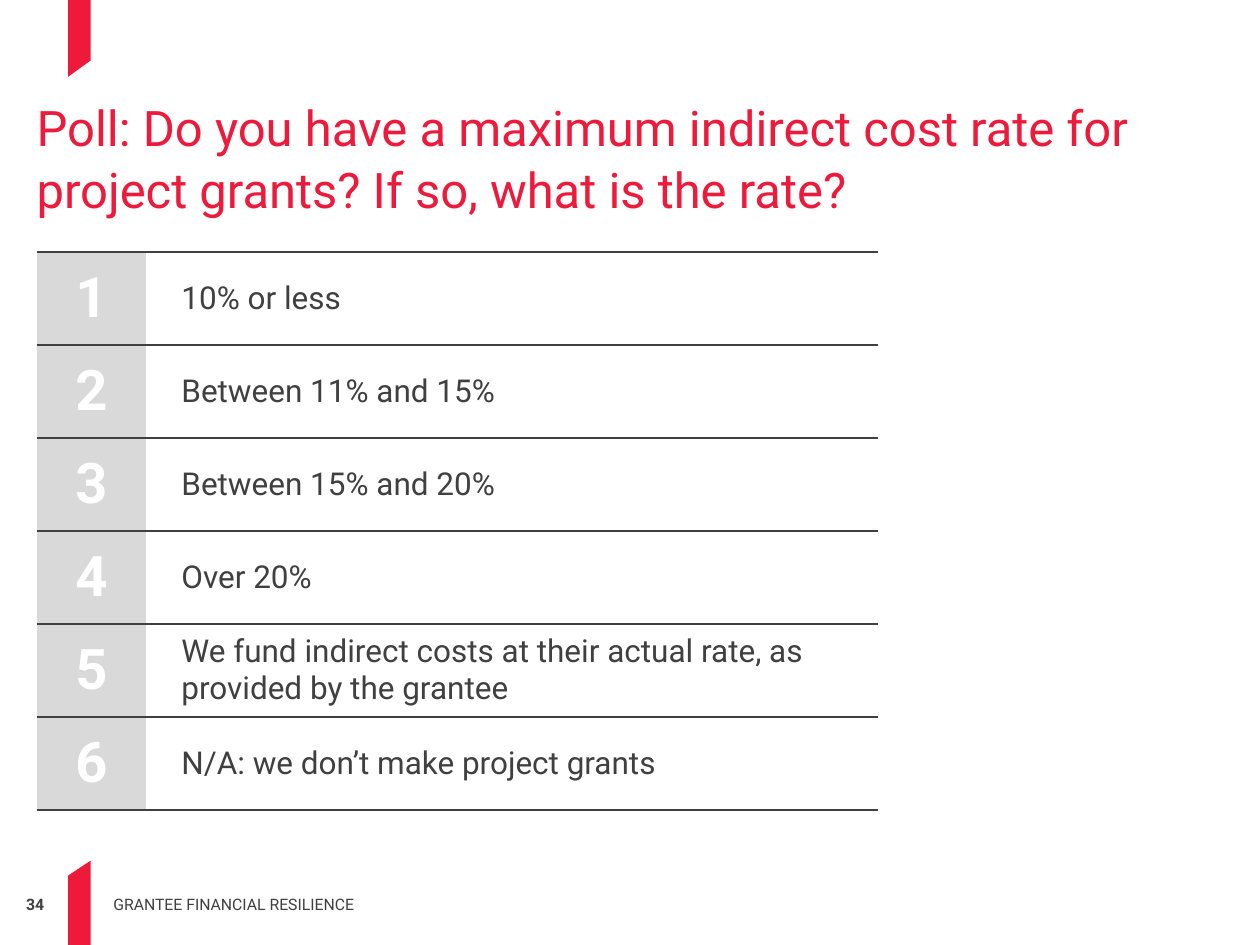
from lxml.etree import SubElement
from pptx import Presentation
from pptx.dml.color import RGBColor
from pptx.enum.text import MSO_ANCHOR as Anchor, PP_ALIGN as Align
from pptx.oxml.ns import qn
from pptx.util import Inches, Pt

RED, GREY, PALE, WHITE = "ED1A3B", "404040", "D9D9D9", "FFFFFF"
ANSWERS = [
    "10% or less",
    "Between 11% and 15%",
    "Between 15% and 20%",
    "Over 20%",
    "We fund indirect costs at their actual rate, as provided by the grantee",
    "N/A: we don’t make project grants",
]


def colour(value):
    return RGBColor.from_string(value)


def set_values(target, values):
    for name, value in values.items():
        setattr(target, name, value)


class Painter:
    font = "Roboto"

    def __init__(self, page):
        self.page = page

    def fill_frame(self, frame, text, size, ink, bold=False, **para_format):
        para = frame.paragraphs[0]
        set_values(para, para_format)
        span = para.add_run()
        span.text = text
        set_values(span.font, {"name": self.font, "size": Pt(size), "bold": bold})
        span.font.color.rgb = colour(ink)

    def text(self, place, text, size, ink, anchor=Anchor.TOP, **style):
        frame = self.page.shapes.add_textbox(*map(Inches, place)).text_frame
        set_values(frame, {
            "word_wrap": True, "vertical_anchor": anchor,
            "margin_left": 0, "margin_right": 0, "margin_top": 0, "margin_bottom": 0,
        })
        self.fill_frame(frame, text, size, ink, **style)

    def outline(self, points, fill):
        start, *rest = [tuple(map(Inches, point)) for point in points]
        builder = self.page.shapes.build_freeform(*start)
        builder.add_line_segments(rest, close=True)
        shape = builder.convert_to_shape()
        shape.shadow.inherit = False
        shape.fill.solid()
        shape.fill.fore_color.rgb = colour(fill)
        shape.line.fill.background()

    def rule_cell(self, cell):
        """Draw lines above and below the cell and none at its sides."""
        properties = cell._tc.get_or_add_tcPr()
        for index, side in enumerate(("lnL", "lnR", "lnT", "lnB")):
            line = SubElement(properties, qn(f"a:{side}"), w=str(Pt(1)))
            if side in ("lnT", "lnB"):
                fill = SubElement(line, qn("a:solidFill"))
                SubElement(fill, qn("a:srgbClr"), val=GREY)
            else:
                SubElement(line, qn("a:noFill"))
            properties.insert(index, line)

    def cell(self, cell, text, size, ink, fill=None, indent=0.14, **style):
        set_values(cell, {
            "vertical_anchor": Anchor.MIDDLE,
            "margin_left": Inches(indent), "margin_right": Inches(0.14),
            "margin_top": Inches(0.05), "margin_bottom": Inches(0.05),
        })
        if fill:
            cell.fill.solid()
            cell.fill.fore_color.rgb = colour(fill)
        else:
            cell.fill.background()
        self.rule_cell(cell)
        self.fill_frame(cell.text_frame, text, size, ink, **style)

    def numbered_table(self, place, widths, answers):
        frame = self.page.shapes.add_table(len(answers), 2, *map(Inches, place))
        table = frame.table
        set_values(table, {"first_row": False, "horz_banding": False})
        for column, width in zip(table.columns, widths):
            column.width = Inches(width)
        for row, answer in enumerate(answers):
            self.cell(table.cell(row, 0), str(row + 1), 32, WHITE, PALE,
                      bold=True, alignment=Align.CENTER)
            self.cell(table.cell(row, 1), answer, 18, GREY, indent=0.28)


def main():
    deck = Presentation()
    set_values(deck, {"slide_width": Inches(10), "slide_height": Inches(7.5)})
    painter = Painter(deck.slides.add_slide(deck.slide_layouts[6]))

    painter.outline([(0.72, 0.48), (0.72, 0), (0.54, 0), (0.54, 0.61)], RED)
    painter.outline([(0.54, 6.95), (0.54, 7.5), (0.72, 7.5), (0.72, 6.83)], RED)
    painter.text((0, 7.1, 0.35, 0.15), "34", 9, GREY, bold=True, alignment=Align.RIGHT)
    painter.text(
        (0.29, 0.75, 9.42, 1.05),
        "Poll: Do you have a maximum indirect cost rate for project grants? "
        "If so, what is the rate?",
        28, RED, line_spacing=1.05)
    painter.numbered_table((0.29, 2, 6.68, 4.43), (0.87, 5.81), ANSWERS)
    painter.text((0.9, 6.95, 3.47, 0.3), "GRANTEE FINANCIAL RESILIENCE", 9, GREY,
                 anchor=Anchor.BOTTOM)
    deck.save("out.pptx")


if __name__ == "__main__":
    main()
